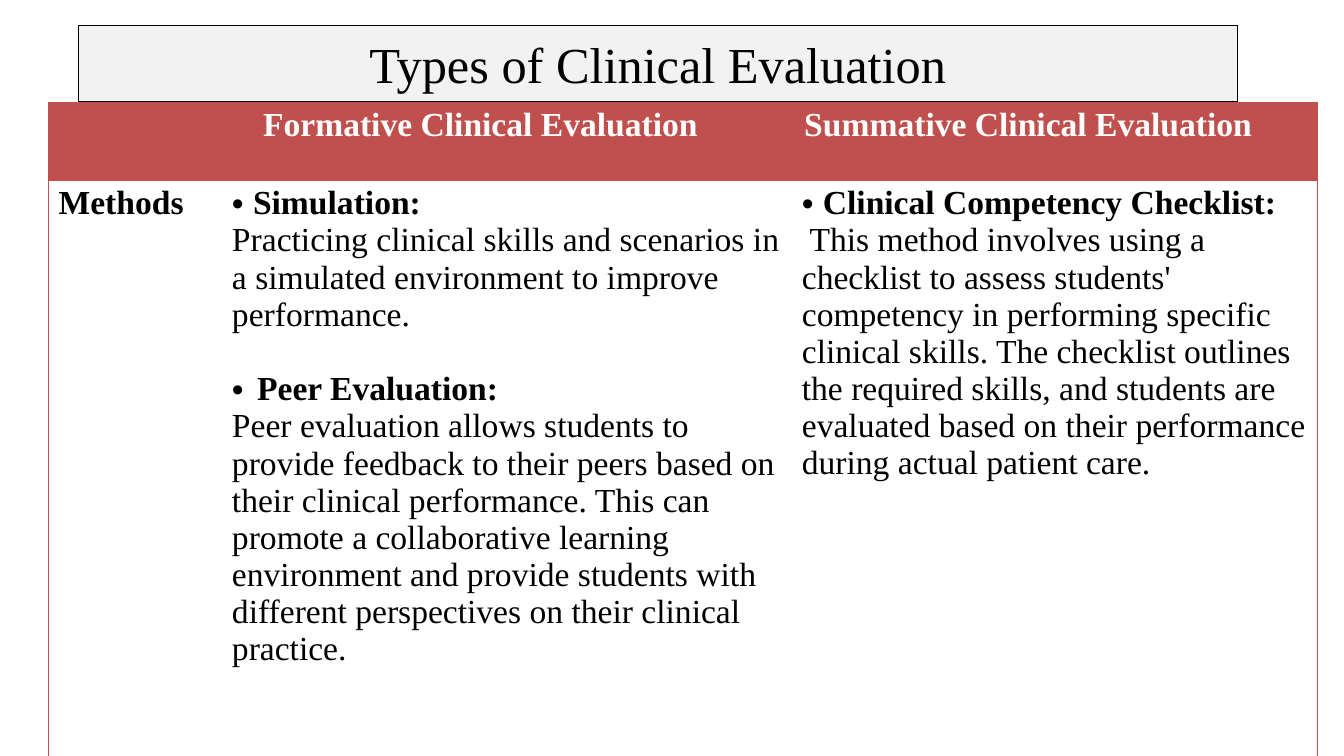
from dataclasses import dataclass

from lxml.etree import SubElement
from pptx import Presentation
from pptx.dml.color import RGBColor as Rgb
from pptx.enum.text import MSO_ANCHOR as Anchor, PP_ALIGN as Align
from pptx.oxml.ns import qn
from pptx.util import Pt

FONT = "Times New Roman"
COLORS = {"black": "000000", "white": "FFFFFF", "gray": "F2F2F2", "red": "C0504D"}


@dataclass
class Para:
    text: str
    bold: bool = False
    hang: float = 0  # bullet indent, none when zero
    gap: float = 0  # space before
    align: Align = Align.LEFT


@dataclass
class Entry:
    row: int
    col: int
    paras: list[Para]
    sides: dict[str, bool]  # edges that carry a red line


def tint(name: str) -> Rgb:
    return Rgb.from_string(COLORS[name])


def style(para, size: float, color: str, bold: bool = False) -> None:
    for run in para.runs:
        font = run.font
        font.name, font.size, font.bold = FONT, Pt(size), bold
        font.color.rgb = tint(color)


def add_edges(cell, sides: dict[str, bool]) -> None:
    props = cell._tc.get_or_add_tcPr()
    for side in "LRTB":
        line = SubElement(props, qn(f"a:ln{side}"), w=str(Pt(0.5)))
        if sides.get(side):
            fill = SubElement(line, qn("a:solidFill"))
            SubElement(fill, qn("a:srgbClr"), val=COLORS["red"])
        else:
            SubElement(line, qn("a:noFill"))


def add_bullet(para, hang: float) -> None:
    props = para._p.get_or_add_pPr()
    props.set("marL", str(Pt(hang)))
    props.set("indent", str(-Pt(hang)))
    SubElement(props, qn("a:buFont"), typeface="Arial")
    SubElement(props, qn("a:buChar"), char="•")


def fill_cell(table, entry: Entry) -> None:
    cell = table.cell(entry.row, entry.col)
    head = entry.row == 0
    add_edges(cell, entry.sides)
    cell.fill.solid()
    cell.fill.fore_color.rgb = tint("red" if head else "white")
    # Headings sit left of the middle of their column
    cell.margin_left, cell.margin_right = (Pt(4), Pt(60)) if head else (Pt(11), Pt(11))
    cell.margin_top = cell.margin_bottom = Pt(5)
    frame = cell.text_frame
    for i, item in enumerate(entry.paras):
        para = frame.paragraphs[0] if i == 0 else frame.add_paragraph()
        para.text = item.text
        para.alignment = item.align
        para.space_before = Pt(item.gap)
        style(para, 36, "white" if head else "black", item.bold)
        if item.hang:
            add_bullet(para, item.hang)


def heading(text: str) -> list[Para]:
    return [Para(text, bold=True, align=Align.CENTER)]


CELLS = [
    [], heading("Formative Clinical Evaluation"), heading("Summative Clinical Evaluation"),
    [Para("Methods", bold=True)],
    [
        Para("Simulation:", bold=True, hang=22.5),
        Para("Practicing clinical skills and scenarios in a simulated environment "
             "to improve performance."),
        Para("Peer Evaluation:", bold=True, hang=27, gap=40),
        Para("Peer evaluation allows students to provide feedback to their peers based on "
             "their clinical performance. This can promote a collaborative learning "
             "environment and provide students with different perspectives on their "
             "clinical practice."),
    ],
    [
        Para("Clinical Competency Checklist:", bold=True, hang=22.5),
        Para(" This method involves using a checklist to assess students' competency in "
             "performing specific clinical skills. The checklist outlines the required "
             "skills, and students are evaluated based on their performance during actual "
             "patient care."),
    ],
]
COLS = [185.8, 610.6, 563]
ROWS = [83.5, 622]


def main() -> None:
    deck = Presentation()
    deck.slide_width, deck.slide_height = Pt(1440), Pt(810)
    slide = deck.slides.add_slide(deck.slide_layouts[5])

    # Title band
    title = slide.shapes.title
    title.left, title.top, title.width, title.height = Pt(84), Pt(27), Pt(1242), Pt(82)
    title.fill.solid()
    title.fill.fore_color.rgb = tint("gray")
    title.line.color.rgb = tint("black")
    title.line.width = Pt(0.75)
    frame = title.text_frame
    frame.text = "Types of Clinical Evaluation"
    frame.vertical_anchor = Anchor.MIDDLE
    frame.paragraphs[0].alignment = Align.CENTER
    style(frame.paragraphs[0], 54, "black")

    # Comparison table
    shape = slide.shapes.add_table(len(ROWS), len(COLS), Pt(51.8), Pt(109.5),
                                   Pt(sum(COLS)), Pt(sum(ROWS)))
    table = shape.table
    table.horz_banding = False
    for col, width in zip(table.columns, COLS):
        col.width = Pt(width)
    for row, height in zip(table.rows, ROWS):
        row.height = Pt(height)
    for i, paras in enumerate(CELLS):
        row, col = divmod(i, len(COLS))
        sides = {"L": col == 0, "R": col == len(COLS) - 1, "T": True, "B": True}
        fill_cell(table, Entry(row, col, paras, sides))

    deck.save("out.pptx")


if __name__ == "__main__":
    main()
